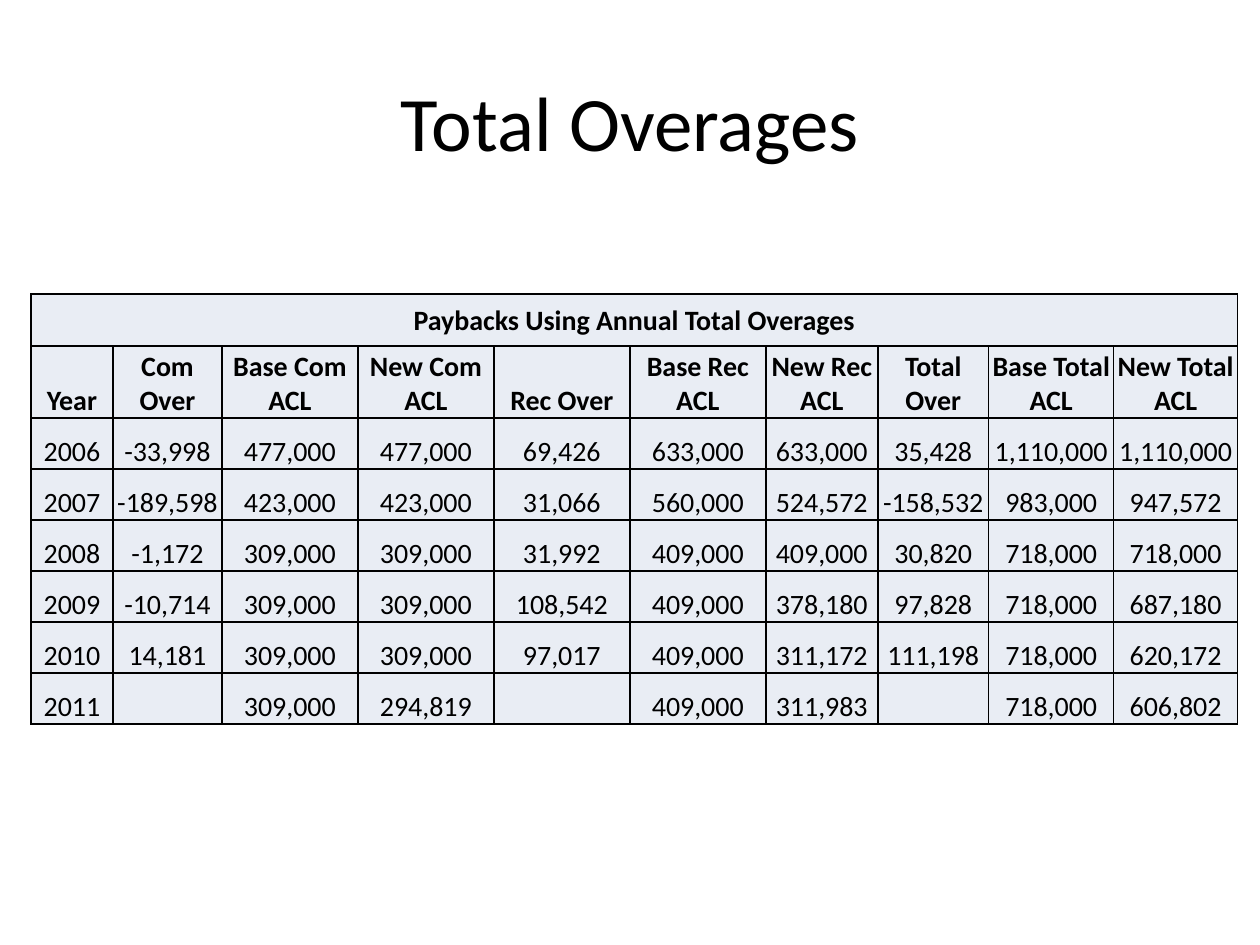
from lxml.etree import SubElement
from pptx import Presentation
from pptx.dml.color import RGBColor
from pptx.enum.text import MSO_ANCHOR, PP_ALIGN
from pptx.oxml.ns import qn
from pptx.util import Emu, Pt

PX = 914400 // 126
BLACK = RGBColor(0x00, 0x00, 0x00)
PALE_BLUE = RGBColor(0xE9, 0xED, 0xF4)
FONT = "Calibri"

COLUMN_WIDTHS = [82, 109, 136, 136, 136, 136, 112, 111, 125, 124]
ROW_HEIGHTS = [52, 72] + [51] * 6
CAPTION = "Paybacks Using Annual Total Overages"
HEADERS = ["Year", "Com Over", "Base Com ACL", "New Com ACL", "Rec Over",
           "Base Rec ACL", "New Rec ACL", "Total Over", "Base Total ACL", "New Total ACL"]
YEARS = [
    ["2006", "-33,998", "477,000", "477,000", "69,426",
     "633,000", "633,000", "35,428", "1,110,000", "1,110,000"],
    ["2007", "-189,598", "423,000", "423,000", "31,066",
     "560,000", "524,572", "-158,532", "983,000", "947,572"],
    ["2008", "-1,172", "309,000", "309,000", "31,992",
     "409,000", "409,000", "30,820", "718,000", "718,000"],
    ["2009", "-10,714", "309,000", "309,000", "108,542",
     "409,000", "378,180", "97,828", "718,000", "687,180"],
    ["2010", "14,181", "309,000", "309,000", "97,017",
     "409,000", "311,172", "111,198", "718,000", "620,172"],
    ["2011", "", "309,000", "294,819", "",
     "409,000", "311,983", "", "718,000", "606,802"],
]


def px(length):
    """Turn whole pixels into EMU."""
    return Emu(length * PX)


def format_text(text_frame, size, bold=False):
    """Centre the text and set its font."""
    for paragraph in text_frame.paragraphs:
        paragraph.alignment = PP_ALIGN.CENTER
        for run in paragraph.runs:
            run.font.name = FONT
            run.font.size = Pt(size)
            run.font.bold = bold
            run.font.color.rgb = BLACK


def add_title(slide, text):
    """Fill and place the title placeholder."""
    title = slide.shapes.title
    title.left, title.top, title.width, title.height = px(63), px(42), px(1134), px(158)
    title.text_frame.text = text
    title.text_frame.vertical_anchor = MSO_ANCHOR.MIDDLE
    format_text(title.text_frame, 44)


def add_borders(cell):
    """Draw a thin black line on every side of a cell."""
    properties = cell._tc.get_or_add_tcPr()
    for side in ("a:lnL", "a:lnR", "a:lnT", "a:lnB"):
        line = SubElement(properties, qn(side), w=str(Pt(1)))
        fill = SubElement(line, qn("a:solidFill"))
        SubElement(fill, qn("a:srgbClr"), val=str(BLACK))


def style_cell(cell, anchor, bold):
    """Give a cell its borders, fill, margins and text format."""
    add_borders(cell)
    cell.fill.solid()
    cell.fill.fore_color.rgb = PALE_BLUE
    cell.margin_left = cell.margin_right = cell.margin_top = px(1)
    cell.margin_bottom = 0
    cell.vertical_anchor = anchor
    format_text(cell.text_frame, 16, bold)


def add_overage_table(slide):
    """Add the table with its caption, header and year rows."""
    rows = [[CAPTION] + [""] * (len(HEADERS) - 1), HEADERS] + YEARS
    table = slide.shapes.add_table(
        len(rows), len(HEADERS), px(31), px(294),
        px(sum(COLUMN_WIDTHS)), px(sum(ROW_HEIGHTS))).table
    for column, width in zip(table.columns, COLUMN_WIDTHS):
        column.width = px(width)
    for row, height in zip(table.rows, ROW_HEIGHTS):
        row.height = px(height)
    for row_index, values in enumerate(rows):
        anchor = MSO_ANCHOR.BOTTOM if row_index else MSO_ANCHOR.MIDDLE
        for column_index, value in enumerate(values):
            cell = table.cell(row_index, column_index)
            cell.text_frame.text = value
            style_cell(cell, anchor, bold=row_index < 2)
    table.cell(0, 0).merge(table.cell(0, len(HEADERS) - 1))


def main():
    """Build and save the slide."""
    presentation = Presentation()
    presentation.slide_width, presentation.slide_height = px(1260), px(945)
    slide = presentation.slides.add_slide(presentation.slide_layouts[5])
    add_title(slide, "Total Overages")
    add_overage_table(slide)
    presentation.save("out.pptx")


if __name__ == "__main__":
    main()
